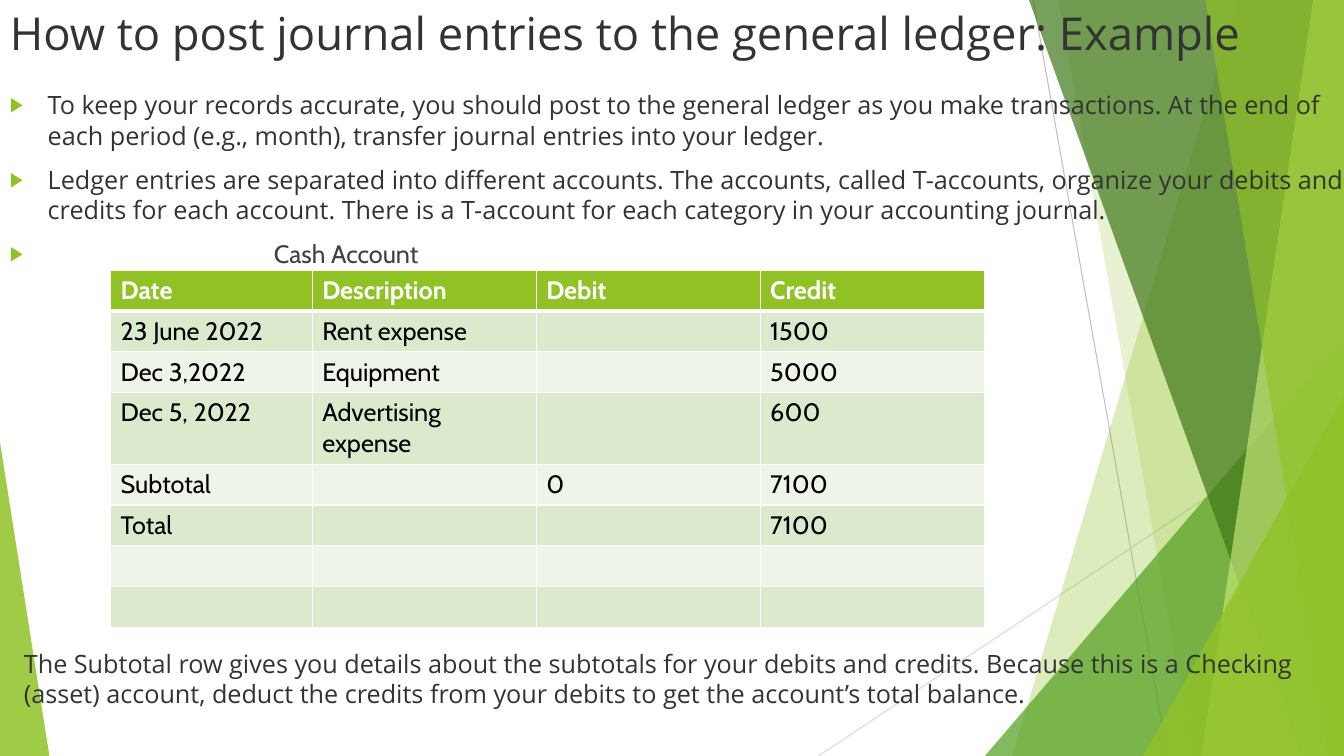
"""Build the slide on posting journal entries to the general ledger."""
from lxml.etree import SubElement
from pptx import Presentation
from pptx.dml.color import RGBColor
from pptx.enum.shapes import MSO_CONNECTOR, MSO_SHAPE
from pptx.enum.text import MSO_ANCHOR
from pptx.oxml.ns import qn
from pptx.util import Pt

WIDTH, HEIGHT = 960, 540
SANS, CABIN = "Open Sans", "Cabin"
GREEN, DARK, WHITE = "90C226", "333333", "FFFFFF"

TITLE = "How to post journal entries to the general ledger: Example"
BULLETS = [
    ("To keep your records accurate, you should post to the general ledger as you make "
     "transactions. At the end of each period (e.g., month), transfer journal entries into "
     "your ledger.", SANS, DARK, 27),
    ("Ledger entries are separated into different accounts. The accounts, called T-accounts, "
     "organize your debits and credits for each account. There is a T-account for each "
     "category in your accounting journal.", SANS, DARK, 27),
    ("Cash Account", CABIN, "404040", 188.5),
]
LEDGER = [
    ("Date", "Description", "Debit", "Credit"),
    ("23 June 2022", "Rent expense", "", "1500"),
    ("Dec 3,2022", "Equipment", "", "5000"),
    ("Dec 5, 2022", "Advertising expense", "", "600"),
    ("Subtotal", "", "0", "7100"),
    ("Total", "", "", "7100"),
    ("", "", "", ""),
    ("", "", "", ""),
]
COLUMN_WIDTHS = [144, 160, 160, 160]
ROW_HEIGHT, TALL_ROW, TALL_HEIGHT = 29.1, 3, 51.4
FOOTNOTE = ("The Subtotal row gives you details about the subtotals for your debits and credits. "
            "Because this is a Checking (asset) account, deduct the credits from your debits to "
            "get the account’s total balance.")

RAYS = [((738, 0), (834, 540), "BFBFBF"), ((960, 290), (584.6, 540), "D9D9D9")]
FACETS = [
    ("band", 884, 723, GREEN, 30),
    ("band", 756, 852, GREEN, 20),
    ("triangle", (703.5, 240, 256.5, 300), 1, "54A021", 72),
    ("band", 735, 929.5, "3F7819", 70),
    ("band", 938, 858.2, "C0E474", 70),
    ("band", 861, 949, GREEN, 65),
    ("triangle", (816.5, 283, 143.5, 257), 1, GREEN, 80),
    ("triangle", (0, 316, 35.3, 224), 0, GREEN, 85),
]


def color(value):
    return RGBColor.from_string(value)


def points(*values):
    return [Pt(value) for value in values]


def add_ray(page, start, end, shade):
    ray = page.shapes.add_connector(MSO_CONNECTOR.STRAIGHT, *points(*start, *end))
    ray.line.color.rgb = color(shade)
    ray.line.width = Pt(0.75)
    SubElement(ray._element.spPr, qn("a:effectLst"))


def add_facet(page, kind, first, second, shade, opacity):
    if kind == "triangle":
        facet = page.shapes.add_shape(MSO_SHAPE.ISOSCELES_TRIANGLE, *points(*first))
        facet.adjustments[0] = second
    else:
        builder = page.shapes.build_freeform(Pt(first), 0)
        corners = [(WIDTH, 0), (WIDTH, HEIGHT), (second, HEIGHT)]
        builder.add_line_segments([points(*corner) for corner in corners], close=True)
        facet = builder.convert_to_shape()
    facet.shadow.inherit = False
    facet.fill.solid()
    facet.fill.fore_color.rgb = color(shade)
    facet.line.fill.background()
    tint = facet._element.spPr.find(qn("a:solidFill"))[0]
    SubElement(tint, qn("a:alpha"), val=str(opacity * 1000))


def add_span(para, text, size, font, shade, bold=False):
    span = para.add_run()
    span.text = text
    span.font.size = Pt(size)
    span.font.name = font
    span.font.bold = bold
    span.font.color.rgb = color(shade)


def add_text_frame(page, *bounds):
    frame = page.shapes.add_textbox(*points(*bounds)).text_frame
    frame.word_wrap = True
    return frame


def add_bullet(para, indent):
    props = para._p.get_or_add_pPr()
    props.set("marL", str(Pt(indent)))
    props.set("indent", str(-Pt(indent)))
    para.space_before = Pt(10)
    SubElement(SubElement(props, qn("a:buClr")), qn("a:srgbClr"), val=GREEN)
    SubElement(props, qn("a:buSzPct"), val="80000")
    SubElement(props, qn("a:buFont"), typeface="Arial")
    SubElement(props, qn("a:buChar"), char="▶")


def style_cell(cell, shade, bottom):
    props = cell._tc.get_or_add_tcPr()
    for side, width in (("L", 1), ("R", 1), ("T", 1), ("B", bottom)):
        border = SubElement(props, qn(f"a:ln{side}"), w=str(Pt(width)))
        SubElement(SubElement(border, qn("a:solidFill")), qn("a:srgbClr"), val=WHITE)
    cell.fill.solid()
    cell.fill.fore_color.rgb = color(shade)


def add_ledger(page):
    bounds = points(79, 193, sum(COLUMN_WIDTHS), ROW_HEIGHT * len(LEDGER))
    table = page.shapes.add_table(len(LEDGER), len(COLUMN_WIDTHS), *bounds).table
    for column, width in zip(table.columns, COLUMN_WIDTHS):
        column.width = Pt(width)
    for index, entries in enumerate(LEDGER):
        header = index == 0
        table.rows[index].height = Pt(TALL_HEIGHT if index == TALL_ROW else ROW_HEIGHT)
        shade = GREEN if header else ("EEF4E8", "DBE9CD")[index % 2]
        for position, entry in enumerate(entries):
            cell = table.cell(index, position)
            style_cell(cell, shade, 3 if header or index == 0 else 1)
            if entry:
                add_span(cell.text_frame.paragraphs[0], entry, 18, CABIN,
                         WHITE if header else "000000", header)


def main():
    deck = Presentation()
    deck.slide_width, deck.slide_height = points(WIDTH, HEIGHT)
    page = deck.slides.add_slide(deck.slide_layouts[6])
    for ray in RAYS:
        add_ray(page, *ray)
    for facet in FACETS:
        add_facet(page, *facet)

    title = add_text_frame(page, 0, 0, WIDTH, 72)
    title.vertical_anchor = MSO_ANCHOR.TOP
    add_span(title.paragraphs[0], TITLE, 32.4, SANS, DARK)

    body = add_text_frame(page, 0, 60.5, 975.5, 479.5)
    for index, (text, font, shade, indent) in enumerate(BULLETS):
        para = body.add_paragraph() if index else body.paragraphs[0]
        add_bullet(para, indent)
        add_span(para, text, 18, font, shade)

    add_ledger(page)
    footnote = add_text_frame(page, 10, 459.5, 950, 51)
    add_span(footnote.paragraphs[0], FOOTNOTE, 18, SANS, DARK)
    deck.save("out.pptx")


if __name__ == "__main__":
    main()
